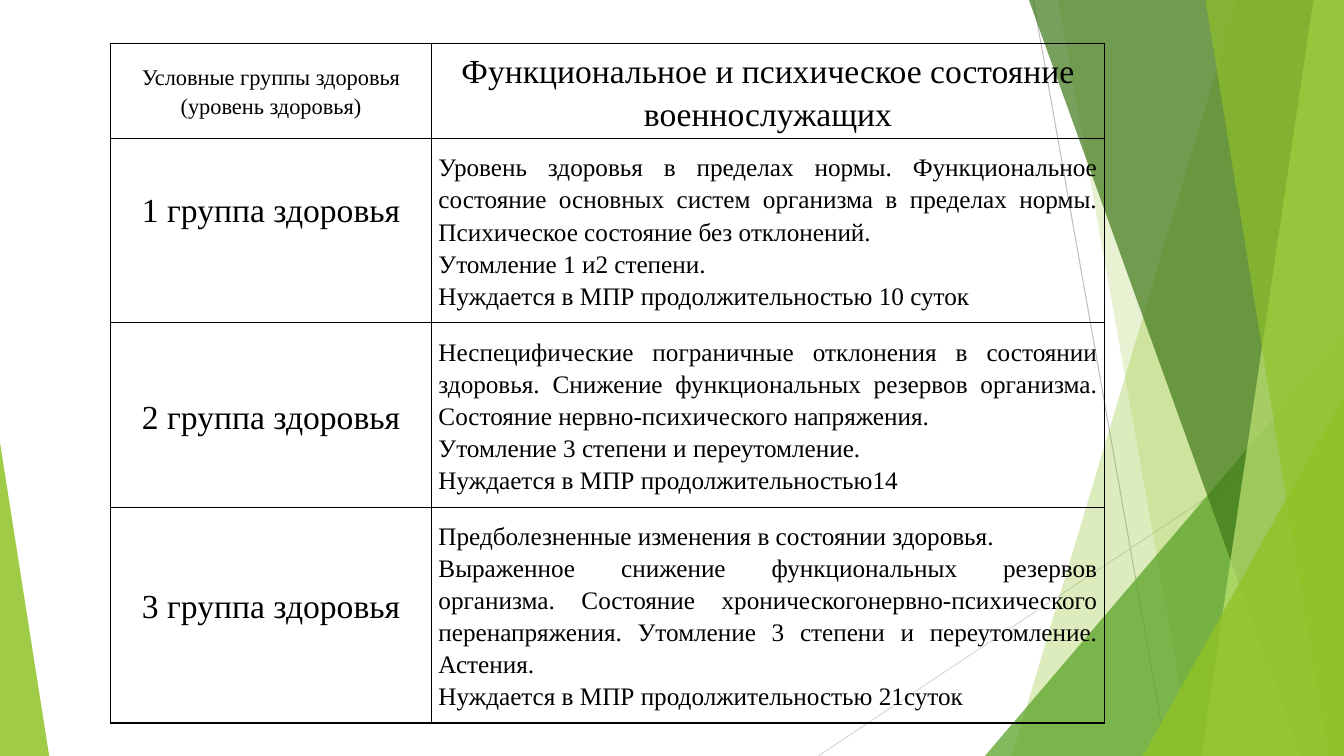
"""Builds a slide with a table of health groups over green angular shapes."""
from lxml import etree
from pptx import Presentation
from pptx.dml.color import RGBColor
from pptx.enum.shapes import MSO_CONNECTOR, MSO_SHAPE
from pptx.enum.text import MSO_ANCHOR, PP_ALIGN
from pptx.oxml.ns import qn
from pptx.util import Cm, Pt

STRAIGHT = MSO_CONNECTOR.STRAIGHT
TRIANGLE = MSO_SHAPE.ISOSCELES_TRIANGLE
MIDDLE = MSO_ANCHOR.MIDDLE
CENTER, JUSTIFY = PP_ALIGN.CENTER, PP_ALIGN.JUSTIFY
WIDTH, HEIGHT = 33.87, 19.05
COLORS = {
    "black": "000000", "gray": "BFBFBF", "pale gray": "D9D9D9", "lime": "90C226",
    "green": "54A021", "dark green": "3F7819", "light lime": "C0E474",
}
LINES = [
    (26.04, 0, 29.41, HEIGHT, "gray"),
    (WIDTH, 10.24, 20.62, HEIGHT, "pale gray"),
]
BACK_BANDS = [(31.19, 25.5, "lime", 30), (26.67, 30.05, "lime", 20)]
FRONT_BANDS = [
    (25.93, 32.79, "dark green", 70),
    (33.1, 30.28, "light lime", 70),
    (30.38, 33.48, "lime", 65),
]
BACK_TRIANGLE = (24.82, 8.46, 9.05, 1, "green", 72)
FRONT_TRIANGLES = [(28.8, 9.98, 5.07, 1, "lime", 80), (0, 11.15, 1.24, 0, "lime", 85)]
COLUMN_WIDTHS = [8.08, 16.97]
ROW_HEIGHTS = [2.39, 4.65, 4.65, 5.44]
HEADINGS = [
    (["Условные группы здоровья", "(уровень здоровья)"], 16),
    (["Функциональное и психическое состояние", "военнослужащих"], 24),
]
GROUPS = [
    ("1 группа здоровья", 1.12, [
        "Уровень здоровья в пределах нормы. Функциональное состояние основных систем "
        "организма в пределах нормы. Психическое состояние без отклонений.",
        "Утомление 1 и2 степени.",
        "Нуждается в МПР продолжительностью 10 суток",
    ]),
    ("2 группа здоровья", 0, [
        "Неспецифические пограничные отклонения в состоянии здоровья. Снижение "
        "функциональных резервов организма. Состояние нервно-психического напряжения.",
        "Утомление 3 степени и переутомление.",
        "Нуждается в МПР продолжительностью14",
    ]),
    ("3 группа здоровья", 0.52, [
        "Предболезненные изменения в состоянии здоровья.",
        "Выраженное снижение функциональных резервов организма. Состояние "
        "хроническогонервно-психического перенапряжения. Утомление 3 степени и "
        "переутомление. Астения.",
        "Нуждается в МПР продолжительностью 21суток",
    ]),
]


class SlideBuilder:
    font_name = "Times New Roman"
    line_spacing = 1.15
    border_sides = ("a:lnL", "a:lnR", "a:lnT", "a:lnB")

    def __init__(self, presentation):
        self.slide = presentation.slides.add_slide(presentation.slide_layouts[6])

    def apply(self, target, values):
        for name, value in values.items():
            setattr(target, name, value)

    def color(self, name):
        return RGBColor.from_string(COLORS[name])

    def line(self, x1, y1, x2, y2, color):
        connector = self.slide.shapes.add_connector(STRAIGHT, Cm(x1), Cm(y1), Cm(x2), Cm(y2))
        connector.line.color.rgb = self.color(color)
        connector.line.width = Pt(0.75)
        etree.SubElement(connector._element.spPr, qn("a:effectLst"))

    def paint(self, shape, color, opacity):
        shape.shadow.inherit = False
        shape.line.fill.background()
        shape.fill.solid()
        shape.fill.fore_color.rgb = self.color(color)
        tint = shape._element.spPr.find(qn("a:solidFill"))[0]
        etree.SubElement(tint, qn("a:alpha"), val=str(opacity * 1000))

    def band(self, top_x, bottom_x, color, opacity):
        outline = self.slide.shapes.build_freeform(Cm(top_x), Cm(0))
        corners = [(WIDTH, 0), (WIDTH, HEIGHT), (bottom_x, HEIGHT)]
        outline.add_line_segments([(Cm(x), Cm(y)) for x, y in corners], close=True)
        self.paint(outline.convert_to_shape(), color, opacity)

    def triangle(self, left, top, width, apex, color, opacity):
        shape = self.slide.shapes.add_shape(
            TRIANGLE, Cm(left), Cm(top), Cm(width), Cm(HEIGHT - top))
        shape.adjustments[0] = apex
        self.paint(shape, color, opacity)

    def table(self, left, top, widths, heights):
        frame = self.slide.shapes.add_table(
            len(heights), len(widths), Cm(left), Cm(top), Cm(sum(widths)), Cm(sum(heights)))
        table = frame.table
        self.apply(table, {"first_row": False, "horz_banding": False})
        for column, width in zip(table.columns, widths):
            column.width = Cm(width)
        for row, height in zip(table.rows, heights):
            row.height = Cm(height)
        return table

    def cell(self, cell, texts, size, alignment=CENTER, bottom=0):
        self.apply(cell, {
            "vertical_anchor": MIDDLE, "margin_left": Cm(0.18), "margin_right": Cm(0.18),
            "margin_top": 0, "margin_bottom": Cm(bottom),
        })
        properties = cell._tc.get_or_add_tcPr()
        for side in self.border_sides:
            border = etree.SubElement(properties, qn(side), w=str(Pt(1)))
            fill = etree.SubElement(border, qn("a:solidFill"))
            etree.SubElement(fill, qn("a:srgbClr"), val=COLORS["black"])
        cell.fill.background()
        for index, text in enumerate(texts):
            frame = cell.text_frame
            paragraph = frame.add_paragraph() if index else frame.paragraphs[0]
            self.apply(paragraph, {"alignment": alignment, "line_spacing": self.line_spacing})
            run = paragraph.add_run()
            run.text = text
            self.apply(run.font, {"name": self.font_name, "size": Pt(size)})
            run.font.color.rgb = self.color("black")


def main():
    presentation = Presentation()
    presentation.slide_width, presentation.slide_height = Cm(WIDTH), Cm(HEIGHT)
    builder = SlideBuilder(presentation)
    for line in LINES:
        builder.line(*line)
    for band in BACK_BANDS:
        builder.band(*band)
    builder.triangle(*BACK_TRIANGLE)
    for band in FRONT_BANDS:
        builder.band(*band)
    for triangle in FRONT_TRIANGLES:
        builder.triangle(*triangle)
    table = builder.table(2.79, 1.09, COLUMN_WIDTHS, ROW_HEIGHTS)
    for column, (texts, size) in enumerate(HEADINGS):
        builder.cell(table.cell(0, column), texts, size)
    for row, (group, bottom, description) in enumerate(GROUPS, 1):
        builder.cell(table.cell(row, 0), [group], 24, bottom=bottom)
        builder.cell(table.cell(row, 1), description, 18, JUSTIFY)
    presentation.save("out.pptx")


if __name__ == "__main__":
    main()
